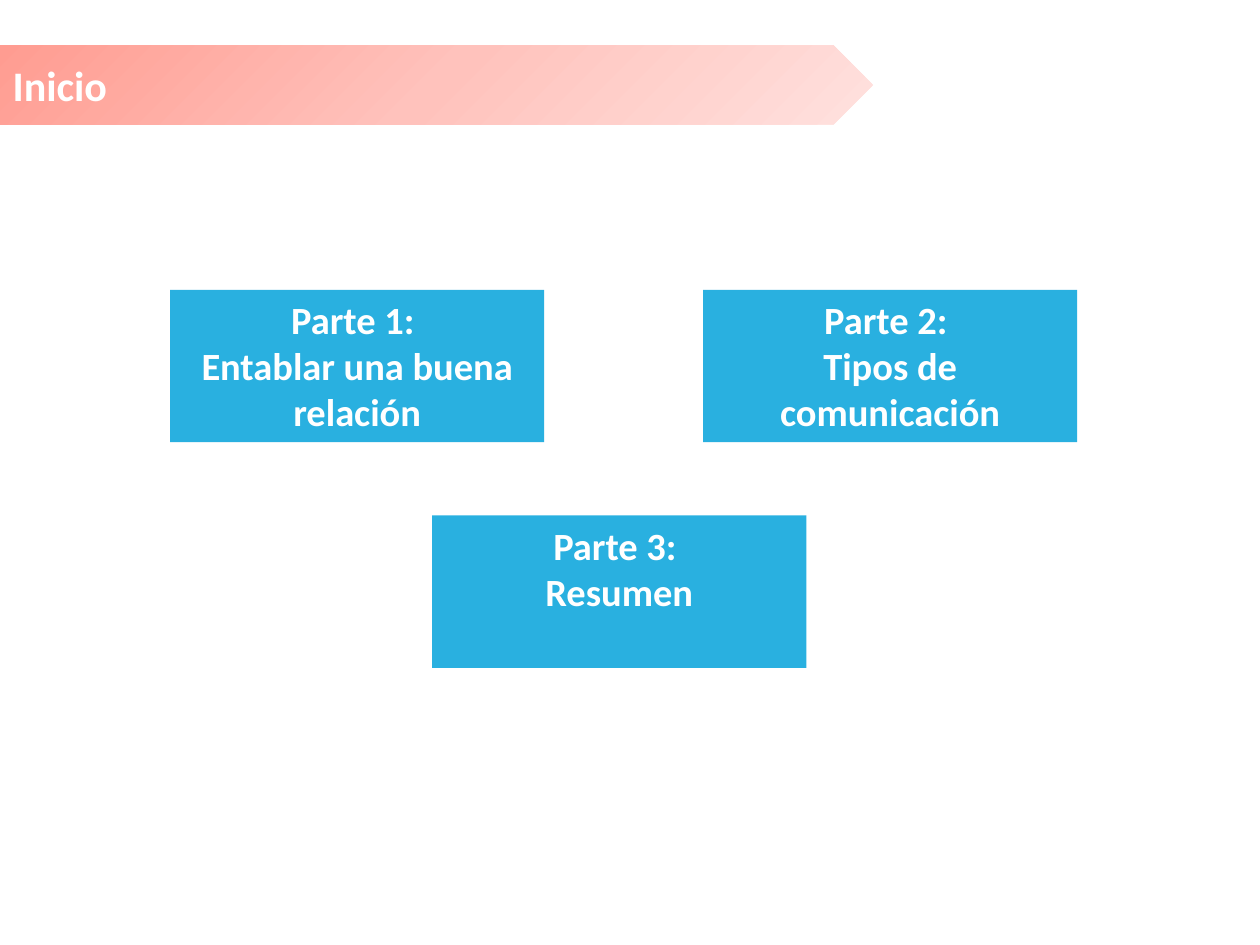
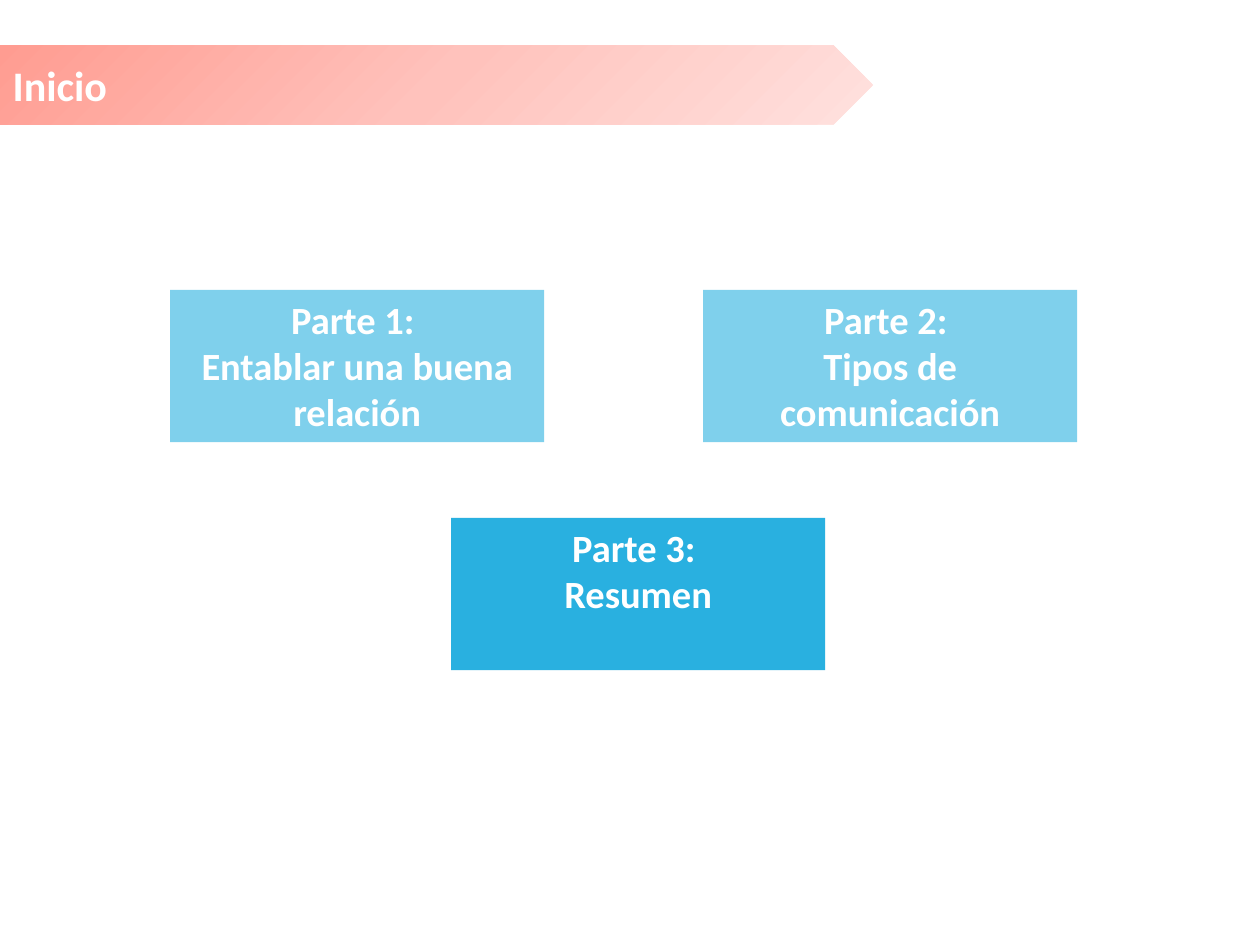
import pptx
import pptx.dml.color
import pptx.enum.shapes
import pptx.enum.text
import pptx.oxml
import pptx.oxml.ns
import pptx.util

Inches = pptx.util.Inches
SHAPES = pptx.enum.shapes.MSO_SHAPE
ALIGN = pptx.enum.text.PP_ALIGN
ANCHOR = pptx.enum.text.MSO_ANCHOR

BLUE = "00A2DB"
WHITE = "FFFFFF"
BAND_STOPS = {0: "FF9C91", 50: "FFC2BC", 100: "FFE1DE"}
STRONG, FADED = 84, 50

BAND = (0, 0.36, 6.93, 0.63)
BOX_WIDTH, BOX_HEIGHT = 2.97, 1.21
UPPER_TOP = 2.3
UPPER_LEFTS = (1.35, 5.58)

PARTS = (
    ("Parte 1: ", "Entablar una buena relación"),
    ("Parte 2: ", "Tipos de comunicación"),
    ("Parte 3: ", "Resumen"),
)


def rgb(value):
    return pptx.dml.color.RGBColor.from_string(value)


def apply(target, **values):
    for attribute, value in values.items():
        setattr(target, attribute, value)


def drawing_xml(text):
    """Turn markup into an element, declaring the drawing namespace on its first tag."""
    return pptx.oxml.parse_xml(text.replace(">", f" {pptx.oxml.ns.nsdecls('a')}>", 1))


class Deck:
    font = {"name": "Calibri", "bold": True}

    def __init__(self):
        self.presentation = pptx.Presentation()
        apply(self.presentation, slide_width=Inches(10), slide_height=Inches(7.5))
        self.slide = None

    def add_slide(self, title):
        title_only = self.presentation.slide_layouts[5]
        self.slide = self.presentation.slides.add_slide(title_only)
        self.band()
        self.title(title)

    def shape(self, kind, place):
        shape = self.slide.shapes.add_shape(kind, *map(Inches, place))
        shape.shadow.inherit = False
        shape.fill.solid()
        shape.line.fill.background()
        return shape

    def band(self):
        """Arrow-shaped band, shaded outwards from its top left corner, behind the title."""
        band = self.shape(SHAPES.PENTAGON, BAND)
        stops = "".join(
            f'<a:gs pos="{position * 1000}"><a:srgbClr val="{color}"/></a:gs>'
            for position, color in BAND_STOPS.items()
        )
        gradient = drawing_xml(
            f'<a:gradFill rotWithShape="1"><a:gsLst>{stops}</a:gsLst><a:path path="circle">'
            '<a:fillToRect r="100000" b="100000"/></a:path></a:gradFill>'
        )
        properties = band._element.spPr
        properties.replace(properties.find(pptx.oxml.ns.qn("a:solidFill")), gradient)
        tree = self.slide.shapes._spTree
        tree.remove(band._element)
        tree.insert(2, band._element)

    def title(self, text):
        title = self.slide.shapes.title
        apply(title, **dict(zip(("left", "top", "width", "height"), map(Inches, BAND))))
        self.set_text(title.text_frame, [text], 24, ALIGN.LEFT, ANCHOR.MIDDLE)

    def part_box(self, lines, left, top, opacity):
        box = self.shape(SHAPES.RECTANGLE, (left, top, BOX_WIDTH, BOX_HEIGHT))
        box.fill.fore_color.rgb = rgb(BLUE)
        color = box._element.spPr.find(".//" + pptx.oxml.ns.qn("a:srgbClr"))
        color.append(drawing_xml(f'<a:alpha val="{opacity * 1000}"></a:alpha>'))
        self.set_text(box.text_frame, lines, 22, ALIGN.CENTER, ANCHOR.TOP)

    def set_text(self, frame, lines, size, alignment, anchor):
        frame.text = "\n".join(lines)
        apply(frame, word_wrap=True, vertical_anchor=anchor,
              auto_size=pptx.enum.text.MSO_AUTO_SIZE.NONE)
        for paragraph in frame.paragraphs:
            paragraph.alignment = alignment
            for run in paragraph.runs:
                apply(run.font, size=pptx.util.Pt(size), **self.font)
                run.font.color.rgb = rgb(WHITE)


def main():
    deck = Deck()
    for upper_opacity, summary_place in ((STRONG, (3.43, 4.09)), (FADED, (3.58, 4.11))):
        deck.add_slide("Inicio")
        *upper_parts, summary = PARTS
        for lines, left in zip(upper_parts, UPPER_LEFTS):
            deck.part_box(lines, left, UPPER_TOP, upper_opacity)
        deck.part_box(summary, *summary_place, STRONG)
    deck.presentation.save("out.pptx")


if __name__ == "__main__":
    main()
